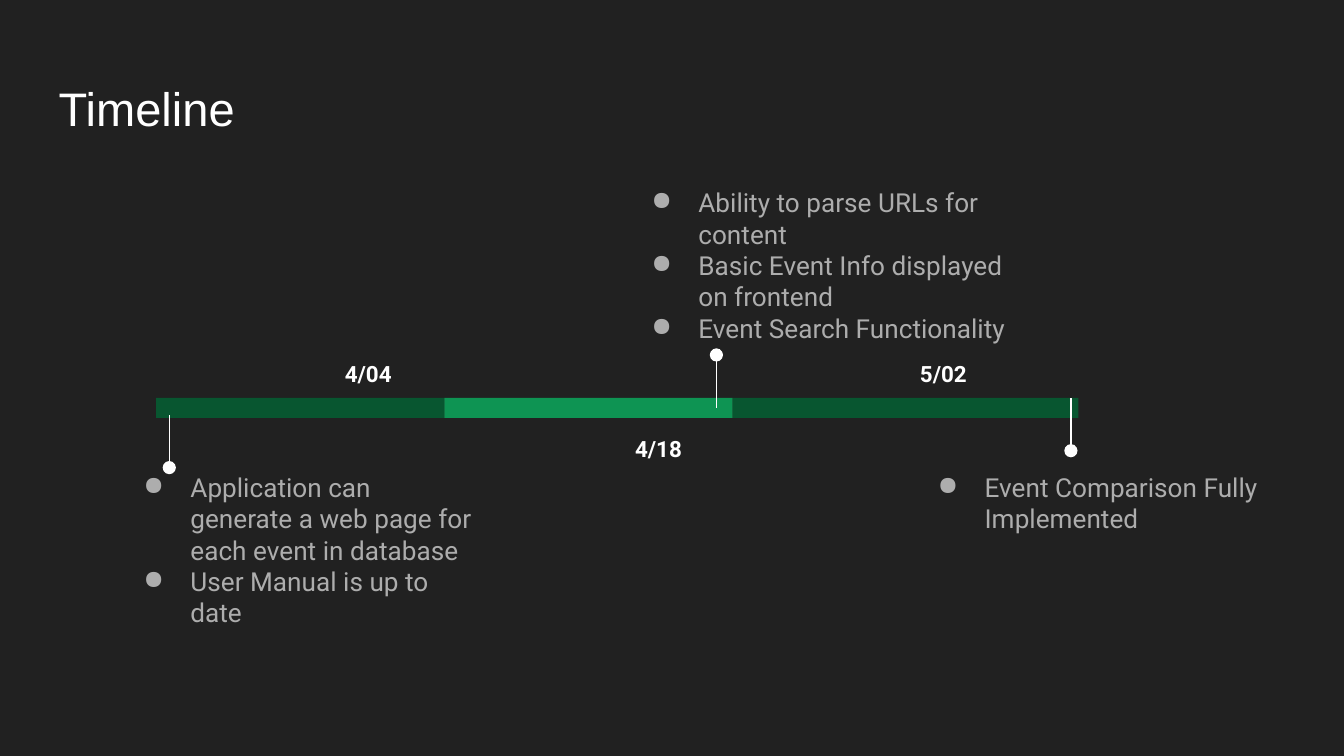
from pptx import Presentation
from pptx.dml.color import RGBColor
from pptx.enum.shapes import MSO_CONNECTOR, MSO_SHAPE
from pptx.enum.text import MSO_ANCHOR, PP_ALIGN
from pptx.oxml.ns import qn
from pptx.util import Cm, Pt
from lxml.etree import SubElement

THEME = dict(bg="212121", white="FFFFFF", grey="ADADAD", dark="085630", bright="0E9453",
             head="Arial", body="Roboto", title=25.2, date=12, note=14, line=0.75)

TITLE = "Timeline"
BAR_LEFT, BAR_TOP, BAR_HEIGHT = 2.95, 7.52, 0.38
PIN_LENGTH, DOT = 1, 0.25
ABOVE, BELOW = 1, -1
PHASES = [(5.45, "dark"), (5.45, "bright"), (6.53, "dark")]
MILESTONES = [
    dict(date="4/04", date_box=(5.92, 6.48, 2.08, 1.04), pin=(3.2, 8.84, BELOW),
         note_box=(2.08, 8.66, 7.16, 2.62),
         notes=["Application can generate a web page for each event in database",
                "User Manual is up to date"]),
    dict(date="4/18", date_box=(11.48, 7.9, 1.93, 1.04), pin=(13.54, 6.71, ABOVE),
         note_box=(11.68, 3.28, 7.75, 2.62),
         notes=["Ability to parse URLs for content",
                "Basic Event Info displayed on frontend",
                "Event Search Functionality"]),
    dict(date="5/02", date_box=(16.79, 6.48, 2.08, 1.04), pin=(20.24, 8.52, BELOW),
         note_box=(17.09, 8.66, 7.16, 2.62),
         notes=["Event Comparison Fully Implemented"]),
]


def color(name):
    return RGBColor.from_string(THEME[name])


def add_bullet(p):
    pPr = p._p.get_or_add_pPr()
    pPr.set("marL", str(Cm(1.27)))
    pPr.set("indent", str(Cm(-0.89)))
    clr = SubElement(pPr, qn("a:buClr"))
    SubElement(clr, qn("a:srgbClr"), val=THEME["grey"])
    SubElement(pPr, qn("a:buChar"), char="●")


def add_text(s, box, lines, size, fill="white", font="body", bold=False, align=PP_ALIGN.LEFT,
             anchor=MSO_ANCHOR.TOP, spacing=1.0, after=0, bullet=False):
    tf = s.shapes.add_textbox(*map(Cm, box)).text_frame
    tf.word_wrap = True
    tf.vertical_anchor = anchor
    tf.margin_left = tf.margin_right = tf.margin_top = tf.margin_bottom = Cm(0.25)
    for i, line in enumerate(lines):
        p = tf.add_paragraph() if i else tf.paragraphs[0]
        p.alignment, p.line_spacing, p.space_after = align, spacing, Pt(after)
        if bullet:
            add_bullet(p)
        r = p.add_run()
        r.text = line
        r.font.name, r.font.size, r.font.bold = THEME[font], Pt(THEME[size]), bold
        r.font.color.rgb = color(fill)


def add_filled(s, kind, box, fill):
    sp = s.shapes.add_shape(kind, *map(Cm, box))
    sp.shadow.inherit = False
    sp.fill.solid()
    sp.fill.fore_color.rgb = color(fill)
    sp.line.fill.background()


def add_pin(s, x, y, side):
    line = s.shapes.add_connector(MSO_CONNECTOR.STRAIGHT, Cm(x), Cm(y),
                                  Cm(x), Cm(y + side * PIN_LENGTH))
    line.line.color.rgb = color("white")
    line.line.width = Pt(THEME["line"])
    SubElement(line._element.spPr, qn("a:effectLst"))
    add_filled(s, MSO_SHAPE.OVAL, (x - DOT / 2, y - DOT / 2, DOT, DOT), "white")


def main():
    prs = Presentation()
    prs.slide_width, prs.slide_height = Cm(25.4), Cm(14.29)
    s = prs.slides.add_slide(prs.slide_layouts[6])
    s.background.fill.solid()
    s.background.fill.fore_color.rgb = color("bg")

    add_text(s, (0.86, 1.24, 23.67, 1.6), [TITLE], "title", font="head",
             anchor=MSO_ANCHOR.MIDDLE)
    x = BAR_LEFT
    for width, fill in PHASES:
        add_filled(s, MSO_SHAPE.RECTANGLE, (x, BAR_TOP, width, BAR_HEIGHT), fill)
        x += width
    for m in MILESTONES:
        add_pin(s, *m["pin"])
        add_text(s, m["date_box"], [m["date"]], "date", bold=True, align=PP_ALIGN.CENTER,
                 spacing=1.15, after=16)
        add_text(s, m["note_box"], m["notes"], "note", fill="grey", bullet=True)
    prs.save("out.pptx")


if __name__ == "__main__":
    main()
